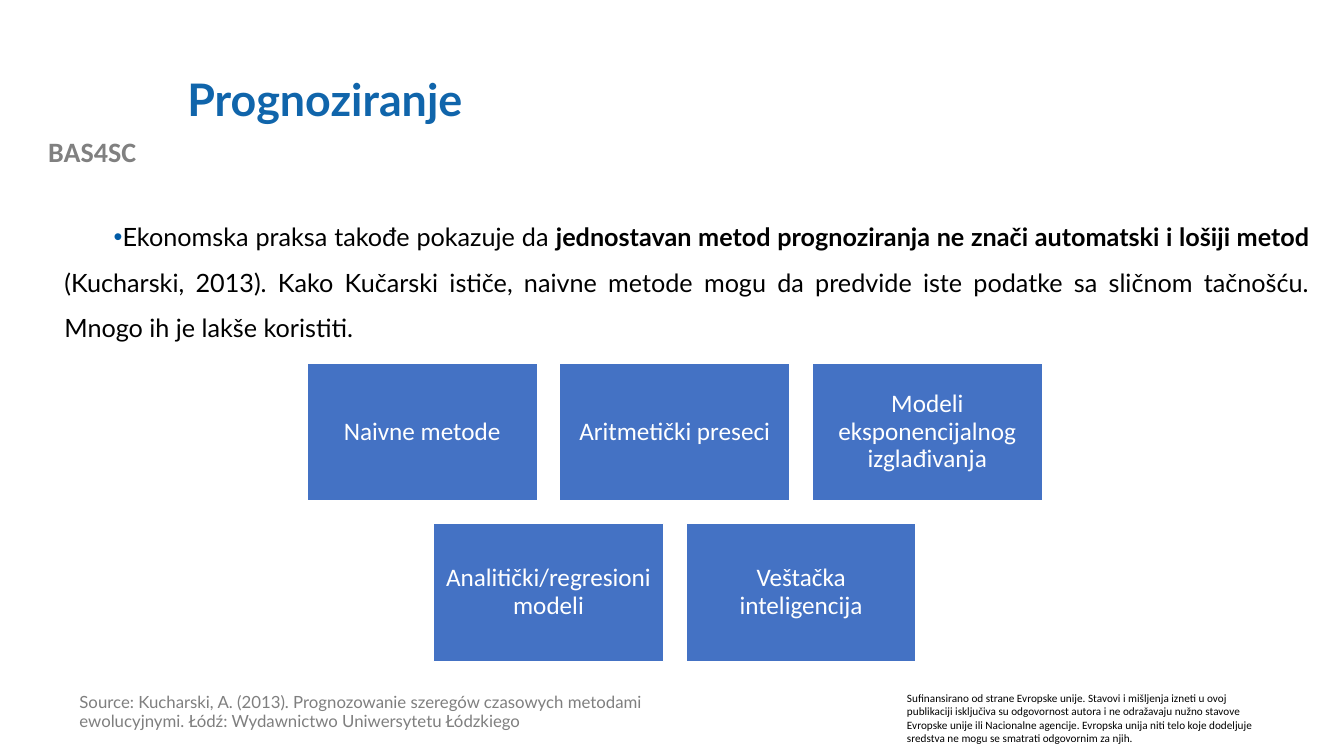
from dataclasses import dataclass

from lxml.etree import SubElement
from pptx import Presentation
from pptx.dml.color import RGBColor
from pptx.enum.shapes import MSO_SHAPE
from pptx.enum.text import MSO_ANCHOR, PP_ALIGN
from pptx.oxml.ns import qn
from pptx.slide import Slide
from pptx.text.text import TextFrame
from pptx.util import Pt


@dataclass(frozen=True)
class Theme:
    heading_font: str = "Lato"
    label_font: str = "Calibri"
    blue: str = "1065AB"
    bullet: str = "015BA6"
    tile: str = "4472C4"
    white: str = "FFFFFF"
    black: str = "000000"
    project_grey: str = "808080"
    source_grey: str = "7F7F7F"
    title_size: float = 32
    project_size: float = 20
    body_size: float = 18
    source_size: float = 12
    disclaimer_size: float = 8


THEME = Theme()


@dataclass(frozen=True)
class Span:
    text: str
    bold: bool = False


@dataclass(frozen=True)
class Style:
    font: str
    size: float
    color: str
    bold: bool | None = None
    align: PP_ALIGN = PP_ALIGN.LEFT
    anchor: MSO_ANCHOR = MSO_ANCHOR.TOP
    line_spacing: float = 1.0
    bullet_color: str | None = None
    left_indent: float = 0
    first_indent: float = 0


@dataclass(frozen=True)
class TextBlock:
    left: float
    top: float
    width: float
    height: float
    spans: tuple[Span, ...]
    style: Style


TEXT_BLOCKS = (
    TextBlock(0, 92.2, 131.8, 31.7, (Span("BAS4SC"),),
              Style(THEME.label_font, THEME.project_size, THEME.project_grey,
                    bold=True, align=PP_ALIGN.CENTER)),
    TextBlock(640.8, 490.3, 266.4, 46, (Span(
        "Sufinansirano od strane Evropske unije. Stavovi i mišljenja izneti u ovoj "
        "publikaciji isključiva su odgovornost autora i ne odražavaju nužno stavove "
        "Evropske unije ili Nacionalne agencije. Evropska unija niti telo koje "
        "dodeljuje sredstva ne mogu se smatrati odgovornim za njih."),),
        Style(THEME.label_font, THEME.disclaimer_size, THEME.black)),
    TextBlock(126.7, 28.8, 767.5, 87.8, (Span("Prognoziranje"),),
              Style(THEME.heading_font, THEME.title_size, THEME.blue, bold=True,
                    anchor=MSO_ANCHOR.MIDDLE, line_spacing=0.9)),
    TextBlock(20.9, 144, 921.6, 126, (
        Span("Ekonomska praksa takođe pokazuje da "),
        Span("jednostavan metod prognoziranja ne znači automatski i lošiji metod ", True),
        Span("(Kucharski, 2013). Kako Kučarski ističe, naivne metode mogu da predvide "
             "iste podatke sa sličnom tačnošću. Mnogo ih je lakše koristiti.")),
        Style(THEME.heading_font, THEME.body_size, THEME.black, align=PP_ALIGN.JUSTIFY,
              line_spacing=1.5, bullet_color=THEME.bullet,
              left_indent=18, first_indent=35.3)),
    TextBlock(49.7, 492.5, 477.4, 47.5, (Span(
        "Source: Kucharski, A. (2013). Prognozowanie szeregów czasowych metodami "
        "ewolucyjnymi. Łódź: Wydawnictwo Uniwersytetu Łódzkiego"),),
        Style(THEME.heading_font, THEME.source_size, THEME.source_grey,
              line_spacing=0.9)),
)

TILE_STYLE = Style(THEME.label_font, THEME.body_size, THEME.white,
                   align=PP_ALIGN.CENTER, anchor=MSO_ANCHOR.MIDDLE, line_spacing=0.9)
METHOD_ROWS = (
    ("Naivne metode", "Aritmetički preseci", "Modeli eksponencijalnog izglađivanja"),
    ("Analitički/regresioni modeli", "Veštačka inteligencija"),
)
TILE_WIDTH, TILE_HEIGHT, TILE_GAP = 164.4, 98.6, 16.0
TILES_CENTER, TILES_TOP, TILE_MARGIN = 482.0, 259.2, 5.0


def write_text(frame: TextFrame, spans: tuple[Span, ...], style: Style) -> None:
    frame.word_wrap = True
    frame.vertical_anchor = style.anchor
    para = frame.paragraphs[0]
    para.alignment = style.align
    para.line_spacing = style.line_spacing
    para.space_before = Pt(0)
    if style.bullet_color:
        properties = para._p.get_or_add_pPr()
        properties.set("marL", str(Pt(style.left_indent)))
        properties.set("indent", str(Pt(style.first_indent)))
        color = SubElement(properties, qn("a:buClr"))
        SubElement(color, qn("a:srgbClr"), val=style.bullet_color)
        SubElement(properties, qn("a:buFont"), typeface="Arial")
        SubElement(properties, qn("a:buChar"), char="•")
    para.font.name = style.font
    para.font.size = Pt(style.size)
    para.font.color.rgb = RGBColor.from_string(style.color)
    para.font.bold = style.bold
    for span in spans:
        run = para.add_run()
        run.text = span.text
        if span.bold:
            run.font.bold = True


def add_text_block(page: Slide, block: TextBlock) -> None:
    box = page.shapes.add_textbox(Pt(block.left), Pt(block.top),
                                  Pt(block.width), Pt(block.height))
    write_text(box.text_frame, block.spans, block.style)


def add_tile(page: Slide, left: float, top: float, label: str) -> None:
    tile = page.shapes.add_shape(MSO_SHAPE.RECTANGLE, Pt(left), Pt(top),
                                 Pt(TILE_WIDTH), Pt(TILE_HEIGHT))
    tile.shadow.inherit = False
    tile.fill.solid()
    tile.fill.fore_color.rgb = RGBColor.from_string(THEME.tile)
    tile.line.color.rgb = RGBColor.from_string(THEME.white)
    tile.line.width = Pt(1)
    frame = tile.text_frame
    frame.margin_left = frame.margin_right = Pt(TILE_MARGIN)
    frame.margin_top = frame.margin_bottom = Pt(TILE_MARGIN)
    write_text(frame, (Span(label),), TILE_STYLE)


def add_method_tiles(page: Slide) -> None:
    """Draw each row of tiles centred on the same axis."""
    for row, labels in enumerate(METHOD_ROWS):
        row_width = len(labels) * (TILE_WIDTH + TILE_GAP) - TILE_GAP
        top = TILES_TOP + row * (TILE_HEIGHT + TILE_GAP)
        for column, label in enumerate(labels):
            left = TILES_CENTER - row_width / 2 + column * (TILE_WIDTH + TILE_GAP)
            add_tile(page, left, top, label)


def main() -> None:
    deck = Presentation()
    deck.slide_width, deck.slide_height = Pt(960), Pt(540)
    page = deck.slides.add_slide(deck.slide_layouts[6])
    for block in TEXT_BLOCKS:
        add_text_block(page, block)
    add_method_tiles(page)
    deck.save("out.pptx")


if __name__ == "__main__":
    main()
